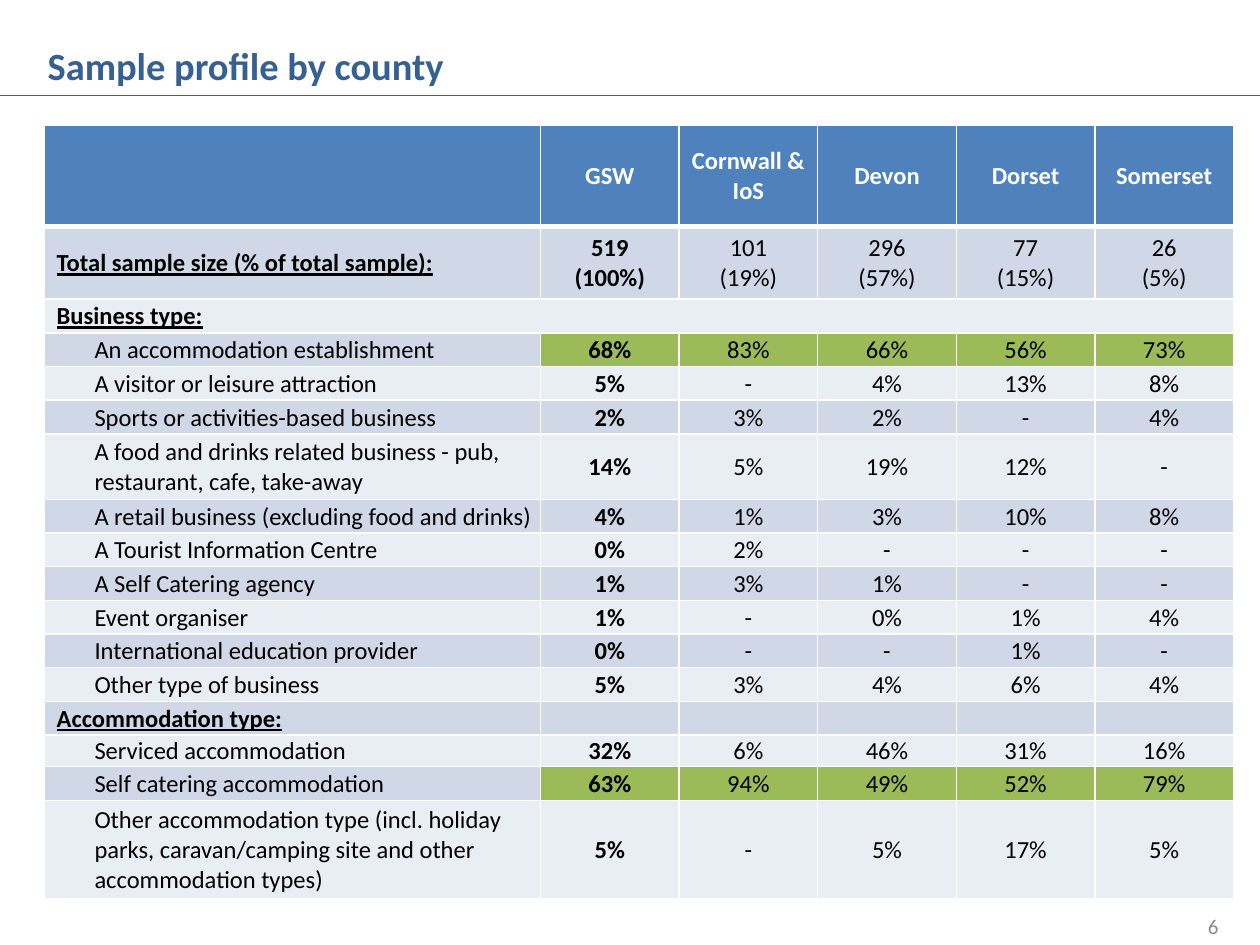
from dataclasses import dataclass

from lxml.etree import SubElement
from pptx import Presentation
from pptx.dml.color import RGBColor
from pptx.enum.shapes import MSO_CONNECTOR
from pptx.enum.text import MSO_ANCHOR, MSO_AUTO_SIZE, PP_ALIGN
from pptx.oxml.ns import qn
from pptx.util import Inches, Pt


@dataclass(frozen=True)
class Theme:
    font: str = "Calibri"
    title: str = "376092"
    header: str = "4F81BD"
    bands: tuple = ("E9EDF4", "D0D8E8")
    highlight: str = "9BBB59"
    white: str = "FFFFFF"
    text: str = "000000"
    muted: str = "8C8C8C"
    title_size: int = 22
    table_size: int = 14
    number_size: int = 12


THEME = Theme()

COUNTIES = ["GSW", "Cornwall & IoS", "Devon", "Dorset", "Somerset"]
SAMPLE = ("Total sample size (% of total sample):",
          ["519\n(100%)", "101\n(19%)", "296\n(57%)", "77\n(15%)", "26\n(5%)"])
BUSINESS = [
    ("An accommodation establishment", "68% 83% 66% 56% 73%"),
    ("A visitor or leisure attraction", "5% - 4% 13% 8%"),
    ("Sports or activities-based business", "2% 3% 2% - 4%"),
    ("A food and drinks related business - pub, restaurant, cafe, take-away",
     "14% 5% 19% 12% -"),
    ("A retail business (excluding food and drinks)", "4% 1% 3% 10% 8%"),
    ("A Tourist Information Centre", "0% 2% - - -"),
    ("A Self Catering agency", "1% 3% 1% - -"),
    ("Event organiser", "1% - 0% 1% 4%"),
    ("International education provider", "0% - - 1% -"),
    ("Other type of business", "5% 3% 4% 6% 4%"),
]
ACCOMMODATION = [
    ("Serviced accommodation", "32% 6% 46% 31% 16%"),
    ("Self catering accommodation", "63% 94% 49% 52% 79%"),
    ("Other accommodation type (incl. holiday parks, caravan/camping site "
     "and other accommodation types)", "5% - 5% 17% 5%"),
]
BLANK = [""] * len(COUNTIES)
ROWS = [
    ("", COUNTIES),
    SAMPLE,
    ("Business type:", BLANK),
    *((label, values.split()) for label, values in BUSINESS),
    ("Accommodation type:", BLANK),
    *((label, values.split()) for label, values in ACCOMMODATION),
]
LABELS = [label for label, _ in ROWS]
BUSINESS_ROW = LABELS.index("Business type:")
HEADING_ROWS = (1, BUSINESS_ROW, LABELS.index("Accommodation type:"))
HIGHLIGHT_ROWS = (LABELS.index("An accommodation establishment"),
                  LABELS.index("Self catering accommodation"))

TABLE_HEIGHT = 6.14
SPECIAL_HEIGHTS = {0: 0.81, 1: 0.57, 6: 0.52, 14: 0.25, 16: 0.78}
LABEL_WIDTH, VALUE_WIDTH = 3.94, 1.1


def style_font(font, size, color, bold=False, underline=False):
    font.name = THEME.font
    font.size = Pt(size)
    font.color.rgb = RGBColor.from_string(color)
    font.bold = bold
    font.underline = underline


def add_text(slide, text, box, size, color, bold=False, align=PP_ALIGN.LEFT):
    s = slide.shapes.add_textbox(*(Inches(v) for v in box))
    tf = s.text_frame
    tf.text = text
    p = tf.paragraphs[0]
    p.alignment = align
    style_font(p.font, size, color, bold)
    return tf


def add_rule(slide, y, width):
    line = slide.shapes.add_connector(
        MSO_CONNECTOR.STRAIGHT, 0, Inches(y), Inches(width), Inches(y))
    line.line.color.rgb = RGBColor.from_string(THEME.title)
    line.line.width = Pt(0.75)
    SubElement(line._element.spPr, qn("a:effectLst"))


def set_borders(cell, row):
    """White grid, with a heavy line under the header row."""
    widths = {"L": 1, "R": 1, "T": 3 if row == 1 else 1, "B": 3 if row == 0 else 1}
    tc_pr = cell._tc.get_or_add_tcPr()
    for side, width in widths.items():
        ln = SubElement(tc_pr, qn(f"a:ln{side}"), w=str(Pt(width)))
        fill = SubElement(ln, qn("a:solidFill"))
        SubElement(fill, qn("a:srgbClr"), val=THEME.white)


def cell_fill(row, col):
    if row == 0:
        return THEME.header
    if row in HIGHLIGHT_ROWS and col > 0:
        return THEME.highlight
    return THEME.bands[row % 2]


def fill_cell(cell, row, col, text):
    is_label = col == 0
    heading = is_label and row in HEADING_ROWS
    set_borders(cell, row)
    cell.fill.solid()
    cell.fill.fore_color.rgb = RGBColor.from_string(cell_fill(row, col))
    cell.vertical_anchor = MSO_ANCHOR.MIDDLE
    if row > 1 or (row == 1 and is_label):
        cell.margin_left = cell.margin_right = cell.margin_top = Inches(0.01)
        cell.margin_bottom = 0
    cell.text = text
    for p in cell.text_frame.paragraphs:
        if is_label:
            p._p.get_or_add_pPr().set("marL", str(Inches(0.09 if heading else 0.39)))
        else:
            p.alignment = PP_ALIGN.CENTER
        style_font(p.font, THEME.table_size,
                   THEME.white if row == 0 else THEME.text,
                   bold=row == 0 or col == 1 or heading, underline=heading)


def add_profile_table(slide):
    width = LABEL_WIDTH + VALUE_WIDTH * len(COUNTIES)
    table = slide.shapes.add_table(
        len(ROWS), len(COUNTIES) + 1, Inches(0.35), Inches(0.99),
        Inches(width), Inches(TABLE_HEIGHT)).table
    table.horz_banding = False
    for col, column in enumerate(table.columns):
        column.width = Inches(VALUE_WIDTH if col else LABEL_WIDTH)
    single = ((TABLE_HEIGHT - sum(SPECIAL_HEIGHTS.values()))
              / (len(ROWS) - len(SPECIAL_HEIGHTS)))
    for row, (label, values) in enumerate(ROWS):
        table.rows[row].height = Inches(SPECIAL_HEIGHTS.get(row, single))
        for col, text in enumerate([label, *values]):
            fill_cell(table.cell(row, col), row, col, text)
    table.cell(BUSINESS_ROW, 0).merge(table.cell(BUSINESS_ROW, len(COUNTIES)))


def main():
    prs = Presentation()
    prs.slide_width, prs.slide_height = Inches(10), Inches(7.5)
    slide = prs.slides.add_slide(prs.slide_layouts[6])
    add_rule(slide, 0.76, 10)
    add_profile_table(slide)
    title = add_text(slide, "Sample profile by county", (0.28, 0.21, 3.38, 0.55),
                     THEME.title_size, THEME.title, bold=True)
    title.word_wrap = False
    title.auto_size = MSO_AUTO_SIZE.SHAPE_TO_FIT_TEXT
    title.paragraphs[0].line_spacing = 1.2
    number = add_text(slide, "6", (7.44, 7.15, 2.33, 0.4),
                      THEME.number_size, THEME.muted, align=PP_ALIGN.RIGHT)
    number.word_wrap = True
    number.vertical_anchor = MSO_ANCHOR.MIDDLE
    prs.save("out.pptx")


if __name__ == "__main__":
    main()
